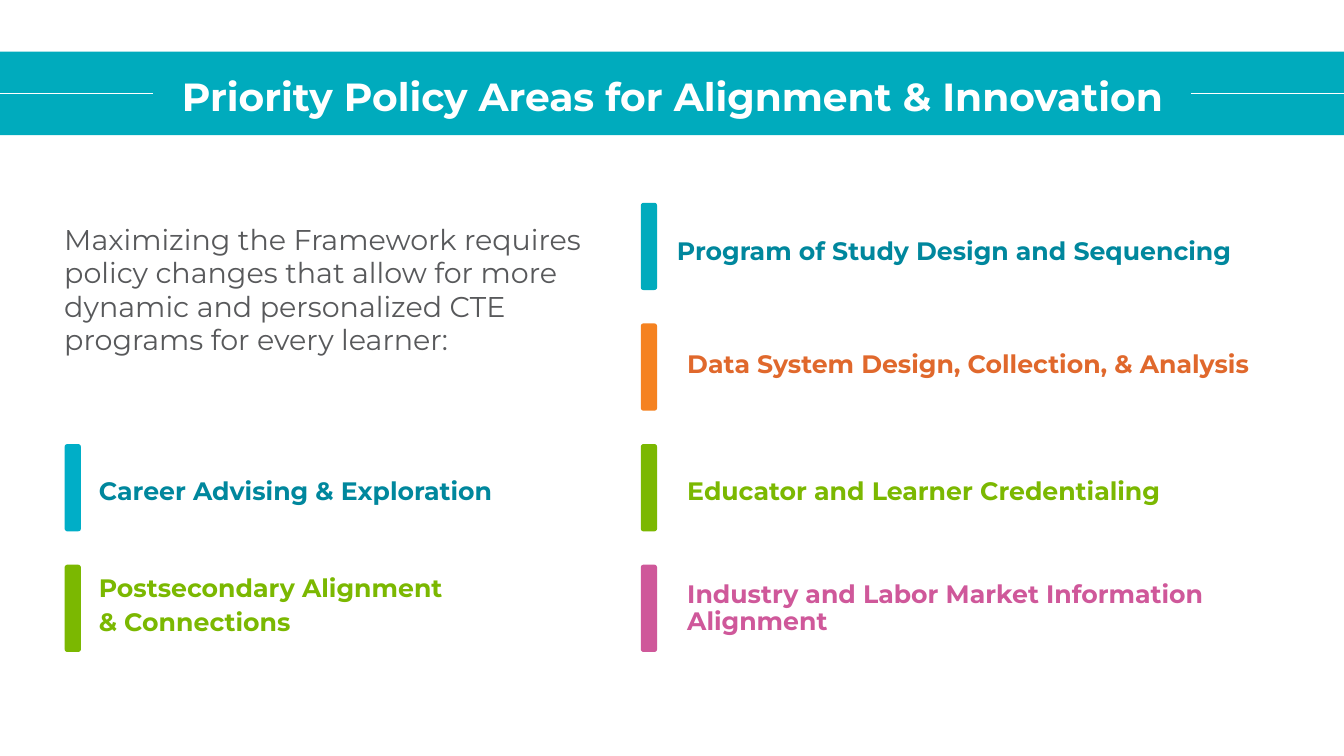
from lxml.etree import SubElement
from pptx import Presentation
from pptx.dml.color import RGBColor
from pptx.enum.shapes import MSO_CONNECTOR as Link, MSO_SHAPE as Shape
from pptx.enum.text import MSO_ANCHOR as Anchor, PP_ALIGN as Align
from pptx.oxml.ns import qn
from pptx.util import Cm, Pt

WIDE, HIGH = 33.87, 19.05
TEAL, WHITE, GREY = "00ABBD", "FFFFFF", "58595B"
DEEP, GREEN, PINK = "00879D", "7BB801", "CF589A"
BAND_TOP, BAND_HIGH = 1.3, 2.11
RULE_TOP, RULE_WIDE = 2.36, 3.86
ROW_TOP, ROW_STEP = 5.11, 3.04
LEFT_BAR, RIGHT_BAR = 1.63, 16.15
LEFT_TEXT, RIGHT_TEXT = 2.24, 17.07

# bar left, row, bar colour, text left, text top, text height, spacing, text colour, lines
AREAS = [
    (RIGHT_BAR, 0, TEAL, 16.81, 5.61, 1.09, 1.92, DEEP,
     ["Program of Study Design and Sequencing"]),
    (RIGHT_BAR, 1, "F58220", RIGHT_TEXT, 8.46, 1.07, 1.92, "E0682C",
     ["Data System Design, Collection, & Analysis"]),
    (RIGHT_BAR, 2, GREEN, RIGHT_TEXT, 11.66, 1.09, 1.92, GREEN,
     ["Educator and Learner Credentialing"]),
    (RIGHT_BAR, 3, PINK, RIGHT_TEXT, 14.55, 1.47, 0.9, PINK,
     ["Industry and Labor Market Information Alignment"]),
    (LEFT_BAR, 2, "00AEC7", LEFT_TEXT, 11.66, 1.09, 1.92, DEEP,
     ["Career Advising & Exploration"]),
    (LEFT_BAR, 3, GREEN, LEFT_TEXT, 14.96, 1.09, 1.14, GREEN,
     ["Postsecondary Alignment", "& Connections"]),
]


def paint(code):
    return RGBColor.from_string(code)


class Board:
    """Holds the slide being drawn and its typeface."""

    font = "Montserrat"

    def __init__(self, slide):
        self.shapes = slide.shapes

    def block(self, kind, left, top, wide, high, color):
        item = self.shapes.add_shape(kind, Cm(left), Cm(top), Cm(wide), Cm(high))
        item.shadow.inherit = False
        item.fill.solid()
        item.fill.fore_color.rgb = paint(color)
        item.line.fill.background()

    def rule(self, left, right, top):
        line = self.shapes.add_connector(
            Link.STRAIGHT, Cm(left), Cm(top), Cm(right), Cm(top))
        line.line.color.rgb = paint(WHITE)
        line.line.width = Pt(0.75)
        SubElement(line._element.spPr, qn("a:effectLst"))

    def text(self, place, lines, size, color, bold=True, space=0.9,
             align=Align.LEFT, anchor=Anchor.BOTTOM, inset=(0.25, 0, 0.25, 0)):
        frame = self.shapes.add_textbox(*map(Cm, place)).text_frame
        frame.word_wrap = True
        frame.vertical_anchor = anchor
        (frame.margin_left, frame.margin_top,
         frame.margin_right, frame.margin_bottom) = map(Cm, inset)
        for row, words in enumerate(lines):
            para = frame.add_paragraph() if row else frame.paragraphs[0]
            para.alignment = align
            para.line_spacing = space
            run = para.add_run()
            run.text = words
            run.font.name = self.font
            run.font.size = Pt(size)
            run.font.bold = bold
            run.font.color.rgb = paint(color)


def main():
    deck = Presentation()
    deck.slide_width, deck.slide_height = Cm(WIDE), Cm(HIGH)
    board = Board(deck.slides.add_slide(deck.slide_layouts[6]))

    board.block(Shape.RECTANGLE, 0, BAND_TOP, WIDE, BAND_HIGH, TEAL)
    for left in (0, WIDE - RULE_WIDE):
        board.rule(left, left + RULE_WIDE, RULE_TOP)
    board.text((4.17, BAND_TOP, 25.55, BAND_HIGH),
               ["Priority Policy Areas for Alignment & Innovation"], 28, WHITE,
               align=Align.CENTER, anchor=Anchor.MIDDLE, inset=(0, 0.25, 0, 0))
    board.text((1.37, ROW_TOP, 14.05, 4.42),
               ["Maximizing the Framework requires policy changes that allow for "
                "more dynamic and personalized CTE programs for every learner:"],
               20.4, GREY, bold=False, space=0.98, anchor=Anchor.MIDDLE,
               inset=(0.25, 0.13, 0.25, 0.13))

    for bar, row, fill, left, top, high, space, color, lines in AREAS:
        board.block(Shape.ROUNDED_RECTANGLE, bar, ROW_TOP + row * ROW_STEP,
                    0.41, 2.2, fill)
        board.text((left, top, 16.21, high), lines, 18, color, space=space)

    deck.save("out.pptx")


if __name__ == "__main__":
    main()
